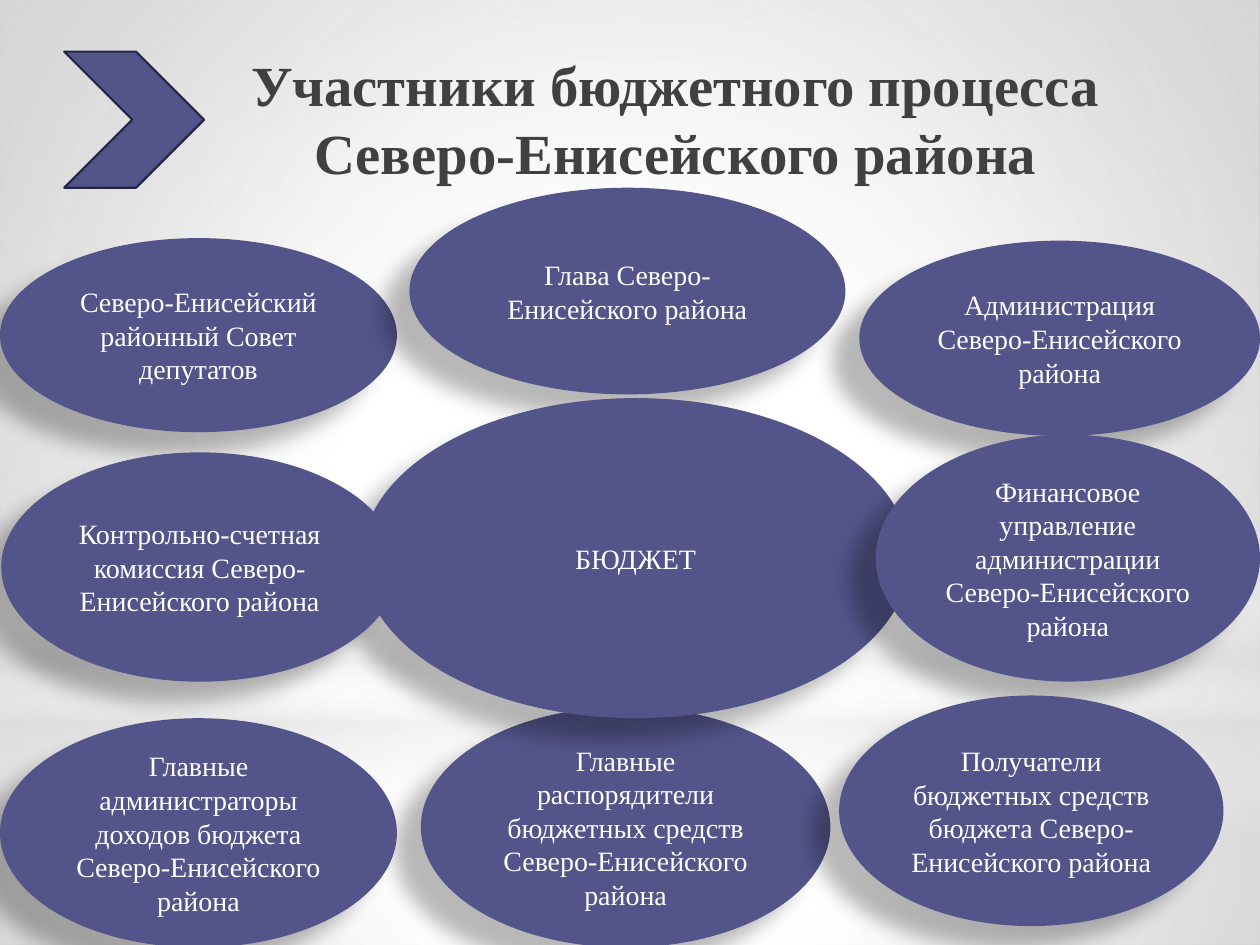
"""Build the slide on the participants of the district budget process."""
from lxml.etree import SubElement
from pptx import Presentation
from pptx.dml.color import RGBColor
from pptx.enum.shapes import MSO_SHAPE as SHAPE
from pptx.enum.text import MSO_ANCHOR as ANCHOR, PP_ALIGN as ALIGN
from pptx.oxml.ns import qn
from pptx.util import Inches, Pt

COLORS = {"white": "FFFFFF", "pale": "DEDEDE", "gray": "B6B6B6", "violet": "53548A",
          "outline": "252647", "title": "404040", "shadow": "000000"}
FONT = "Times New Roman"
CENTER = (50, 50, 50, 50)


def set_gradient(holder, stops, focus=None):
    solid = holder.find(qn("a:solidFill"))
    grad = SubElement(holder, qn("a:gradFill"), rotWithShape="1")
    holder.replace(solid, grad)
    gs_list = SubElement(grad, qn("a:gsLst"))
    for pos, color, alpha in stops:
        gs = SubElement(gs_list, qn("a:gs"), pos=str(pos * 1000))
        clr = SubElement(gs, qn("a:srgbClr"), val=COLORS[color])
        if alpha < 100:
            SubElement(clr, qn("a:alpha"), val=str(alpha * 1000))
    if focus:
        shade = SubElement(grad, qn("a:path"), {"path": "circle"})
        SubElement(shade, qn("a:fillToRect"),
                   {side: str(v * 1000) for side, v in zip("ltrb", focus)})
    else:
        SubElement(grad, qn("a:lin"), ang="5400000", scaled="0")


def add_filled(kind, box, color):
    s = slide.shapes.add_shape(kind, *[Inches(v) for v in box])
    s.shadow.inherit = False
    s.fill.solid()
    s.fill.fore_color.rgb = RGBColor.from_string(COLORS[color])
    s.line.fill.background()
    return s


prs = Presentation()
prs.slide_width, prs.slide_height = Inches(10), Inches(7.5)
slide = prs.slides.add_slide(prs.slide_layouts[5])

slide.background.fill.solid()
set_gradient(slide.element.find(".//" + qn("p:bgPr")),
             [(0, "white", 100), (42, "white", 100), (100, "gray", 100)], (24, 44, 24, 12))

backdrop = [
    (SHAPE.RECTANGLE, (0, 5.58, 10, 1.92),
     [(0, "white", 91), (37, "white", 76), (100, "pale", 79)], CENTER),
    (SHAPE.RECTANGLE, (0, 0, 10, 5.58),
     [(0, "white", 89), (48, "white", 62), (100, "pale", 79)], CENTER),
    (SHAPE.RECTANGLE, (0, 4.12, 10, 2.5),
     [(0, "white", 0), (29, "white", 30), (45, "pale", 40),
      (55, "white", 26), (65, "pale", 60), (100, "white", 0)], None),
    (SHAPE.OVAL, (0, 1.75, 10, 5.58), [(0, "white", 100), (56, "white", 0)], CENTER),
]
for kind, box, stops, focus in backdrop:
    s = add_filled(kind, box, "white")
    set_gradient(s.element.spPr, stops, focus)

title = slide.shapes.title
title.left, title.top, title.width, title.height = [Inches(v) for v in (1.22, 0.36, 8.28, 1.15)]
tf = title.text_frame
tf.text = "Участники бюджетного процесса\vСеверо-Енисейского района"
tf.word_wrap = True
tf.vertical_anchor = ANCHOR.MIDDLE
p = tf.paragraphs[0]
p.alignment = ALIGN.CENTER
for r in p.runs:
    r.font.name, r.font.size, r.font.bold = FONT, Pt(32.4), True
    r.font.color.rgb = RGBColor.from_string(COLORS["title"])
slide.shapes.element.append(title.element)

chevron = add_filled(SHAPE.CHEVRON, (0.51, 0.41, 1.11, 1.08), "violet")
chevron.line.color.rgb = RGBColor.from_string(COLORS["outline"])
chevron.line.width = Pt(1.25)

participants = [
    ("Северо-Енисейский районный Совет депутатов", (0, 1.89, 3.15, 1.54)),
    ("Главные распорядители бюджетных средств Северо-Енисейского района",
     (3.34, 5.61, 3.25, 1.91)),
    ("Администрация Северо-Енисейского района", (6.82, 1.91, 3.18, 1.55)),
    ("Глава Северо-Енисейского района", (3.25, 1.49, 3.46, 1.64)),
    ("БЮДЖЕТ", (2.87, 3.16, 4.35, 2.54)),
    ("Финансовое управление администрации Северо-Енисейского района",
     (6.95, 3.45, 3.05, 1.96)),
    ("Главные администраторы доходов бюджета Северо-Енисейского района",
     (0, 5.7, 3.15, 1.82)),
    ("Получатели бюджетных средств бюджета Северо-Енисейского района",
     (6.66, 5.52, 3.05, 1.83)),
    ("Контрольно-счетная комиссия Северо-Енисейского района", (0.01, 3.59, 3.15, 1.82)),
]
for text, box in participants:
    s = add_filled(SHAPE.OVAL, box, "violet")
    effects = s.element.spPr.find(qn("a:effectLst"))
    shadow = SubElement(effects, qn("a:outerShdw"), blurRad=str(Pt(11.8)), dist=str(Pt(19.7)),
                        dir=str(141 * 60000), algn="ctr", rotWithShape="0")
    clr = SubElement(shadow, qn("a:srgbClr"), val=COLORS["shadow"])
    SubElement(clr, qn("a:alpha"), val="28000")
    tf = s.text_frame
    tf.text = text
    tf.word_wrap = True
    tf.vertical_anchor = ANCHOR.MIDDLE
    p = tf.paragraphs[0]
    p.alignment = ALIGN.CENTER
    font = p.runs[0].font
    font.name, font.size = FONT, Pt(16)
    font.color.rgb = RGBColor.from_string(COLORS["white"])

prs.save("out.pptx")
